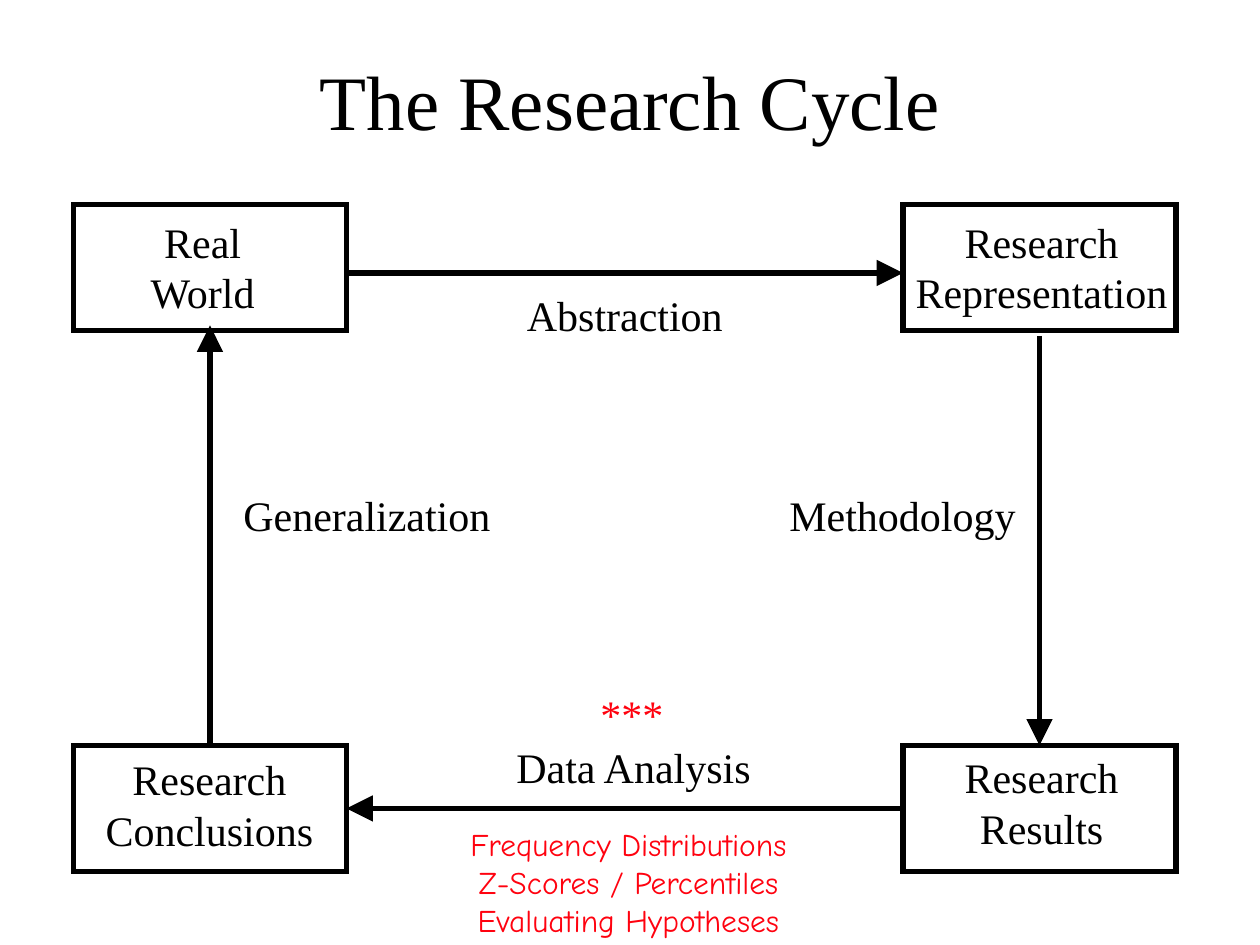
from lxml import etree
from pptx import Presentation, util as u
from pptx.dml.color import RGBColor
from pptx.enum import shapes, text
from pptx.oxml.ns import qn

THEME = {
    "ink": RGBColor(0x00, 0x00, 0x00), "accent": RGBColor(0xFF, 0x02, 0x0F),
    "serif": "Times New Roman", "casual": "Comic Neue",
    "title": 44, "body": 24, "note": 18, "line": 3,
}

prs = Presentation()
prs.slide_width, prs.slide_height = u.Inches(10), u.Inches(7.5)
s = prs.slides.add_slide(prs.slide_layouts[6])
UNIT = prs.slide_width / 120  # grid of 120 columns by 90 rows


def grid(*cells):
    return [u.Emu(round(c * UNIT)) for c in cells]


def add_text(content, at, size="body", font="serif", color="ink",
             align=text.PP_ALIGN.CENTER, anchor=text.MSO_ANCHOR.TOP, wrap=False):
    tf = s.shapes.add_textbox(*grid(*at)).text_frame
    tf.word_wrap = wrap
    if not wrap:
        tf.auto_size = text.MSO_AUTO_SIZE.SHAPE_TO_FIT_TEXT
    tf.vertical_anchor = anchor
    for i, line in enumerate(content.split("\n")):
        p = tf.add_paragraph() if i else tf.paragraphs[0]
        p.alignment = align
        r = p.add_run()
        r.text = line
        r.font.name = THEME[font]
        r.font.size = u.Pt(THEME[size])
        r.font.color.rgb = THEME[color]


# Title
add_text("The Research Cycle", (9, 2, 102, 15), size="title",
         anchor=text.MSO_ANCHOR.MIDDLE, wrap=True)

# Four stages, one in each corner
LEFT, RIGHT, TOP, BOTTOM, BOX_W, BOX_H = 7, 86, 19.5, 71, 26, 12
boxes = {}
for y in (TOP, BOTTOM):
    for x in (LEFT, RIGHT):
        sp = s.shapes.add_shape(shapes.MSO_SHAPE.RECTANGLE, *grid(x, y, BOX_W, BOX_H))
        sp.shadow.inherit = False
        sp.fill.background()
        sp.line.color.rgb = THEME["ink"]
        sp.line.width = u.Pt(THEME["line"])
        etree.SubElement(sp.line._get_or_add_ln(), qn("a:miter"), lim="800000")
        boxes[x, y] = sp

for content, at in [
    ("Real\nWorld", (13, 20, 12.6, 10.8)),
    ("Research\nRepresentation", (86, 20, 26.4, 10.8)),
    ("Research\nResults", (90.4, 71, 17.6, 10.8)),
    ("Research\nConclusions", (8.75, 71.2, 22.4, 10.8)),
]:
    add_text(content, at)

# Arrows around the cycle: ends, then the boxes they join
for ends, start_box, end_box in [
    ((99, 32, 99, BOTTOM), None, boxes[RIGHT, BOTTOM]),
    ((RIGHT, 77, LEFT + BOX_W, 77), boxes[RIGHT, BOTTOM], boxes[LEFT, BOTTOM]),
    ((LEFT + BOX_W, 26, RIGHT, 26), None, None),
    ((20, BOTTOM, 20, 31), boxes[LEFT, BOTTOM], None),
]:
    cx = s.shapes.add_connector(shapes.MSO_CONNECTOR.STRAIGHT, *grid(*ends))
    level = ends[1] == ends[3]
    if start_box:
        cx.begin_connect(start_box, 1 if level else 0)
    if end_box:
        cx.end_connect(end_box, 3 if level else 0)
    cx.line.color.rgb = THEME["ink"]
    cx.line.width = u.Pt(THEME["line"])
    etree.SubElement(cx.line._get_or_add_ln(), qn("a:tailEnd"),
                     type="triangle", w="lg", len="lg")
    etree.SubElement(cx._element.spPr, qn("a:effectLst"))

# Arrow labels
for content, at, color in [
    ("Abstraction", (49, 27, 21.4, 6), "ink"),
    ("Data Analysis", (48, 70, 25.4, 6), "ink"),
    ("Methodology", (74, 46, 24.4, 6), "ink"),
    ("Generalization", (22, 46, 26.4, 6), "ink"),
    ("***", (56, 65, 8.8, 6), "accent"),
]:
    add_text(content, at, color=color, align=text.PP_ALIGN.LEFT)

# Analysis topics
add_text("Frequency Distributions\nZ-Scores / Percentiles\nEvaluating Hypotheses",
         (38.5, 78, 42.7, 12), size="note", font="casual", color="accent")

prs.save("out.pptx")
